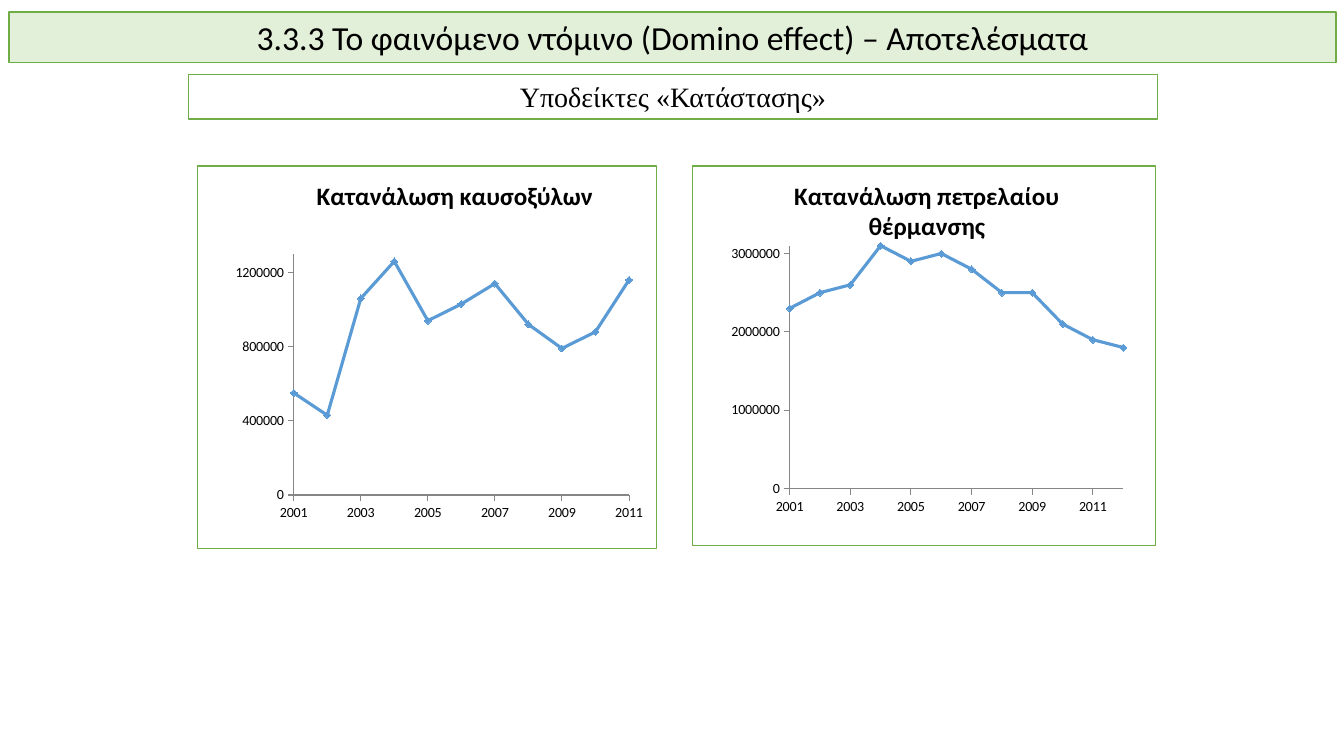
from lxml.etree import SubElement as Sub
from pptx import Presentation
from pptx.chart.data import XyChartData
from pptx.dml.color import RGBColor
from pptx.enum.chart import XL_CHART_TYPE as Kind, XL_MARKER_STYLE as Mark, XL_TICK_MARK as Tick
from pptx.enum.shapes import MSO_SHAPE as Shape
from pptx.enum.text import MSO_ANCHOR as Anchor, MSO_AUTO_SIZE as Auto, PP_ALIGN as Align
from pptx.oxml import parse_xml
from pptx.oxml.ns import nsdecls, qn
from pptx.util import Inches, Pt

HUES = {"ink": "000000", "paper": "FFFFFF", "mint": "E2F0D9", "green": "70AD47",
        "blue": "5B9BD5", "red": "FF0000", "gray": "868686"}
START = 2001

WOOD = {"title": "Κατανάλωση καυσοξύλων", "spot": (0.25, 0.02),
        "plot": (0.21, 0.23, 0.73, 0.63), "top": 1300000, "step": 400000, "hot": 3,
        "vals": [550000, 430000, 1060000, 1260000, 940000, 1030000,
                 1140000, 920000, 790000, 880000, 1160000]}
OIL = {"title": "Κατανάλωση πετρελαίου θέρμανσης", "spot": (0.21, 0.02),
       "plot": (0.21, 0.21, 0.72, 0.64), "top": 3100000, "step": 1000000, "hot": 4,
       "vals": [2300000, 2500000, 2600000, 3100000, 2900000, 3000000,
                2800000, 2500000, 2500000, 2100000, 1900000, 1800000]}


def hue(name):
    return RGBColor.from_string(HUES[name])


def paint(fill, name):
    fill.solid()
    fill.fore_color.rgb = hue(name)


def stroke(line, name, width):
    line.color.rgb = hue(name)
    line.width = Pt(width)


def style(font, face, size):
    font.name = face
    font.size = Pt(size)
    font.color.rgb = hue("ink")


def banner(shape, box, text, fill, face, size):
    shape.left, shape.top, shape.width, shape.height = map(Inches, box)
    paint(shape.fill, fill)
    stroke(shape.line, "green", 1)
    frame = shape.text_frame
    frame.word_wrap = True
    frame.auto_size = Auto.NONE
    frame.vertical_anchor = Anchor.MIDDLE
    para = frame.paragraphs[0]
    para.alignment = Align.CENTER
    run = para.add_run()
    run.text = text
    style(run.font, face, size)


def place(node, index, inner, **spot):
    for old in node.findall(qn("c:layout")):
        node.remove(old)
    layout = parse_xml(f"<c:layout {nsdecls('c')}/>")
    node.insert(index, layout)
    manual = Sub(layout, qn("c:manualLayout"))
    if inner:
        Sub(manual, qn("c:layoutTarget")).set("val", "inner")
    for key in "xy":
        Sub(manual, qn(f"c:{key}Mode")).set("val", "edge")
    for key, val in spot.items():
        Sub(manual, qn(f"c:{key}")).set("val", str(val))


def frame_chart(chart):
    chart.element.find(qn("c:chart")).addnext(parse_xml(
        f"<c:spPr {nsdecls('c', 'a')}>"
        f'<a:solidFill><a:srgbClr val="{HUES["paper"]}"/></a:solidFill>'
        f'<a:ln w="{Pt(1)}"><a:solidFill><a:srgbClr val="{HUES["green"]}"/></a:solidFill></a:ln>'
        "</c:spPr>"))


def scale(axis, low, high, step):
    axis.minimum_scale, axis.maximum_scale, axis.major_unit = low, high, step
    axis.has_major_gridlines = False
    axis.major_tick_mark = Tick.OUTSIDE
    axis.minor_tick_mark = Tick.NONE
    axis.tick_labels.number_format = "General"
    axis.tick_labels.number_format_is_linked = False
    stroke(axis.format.line, "gray", 0.75)


def dot(marker, shape, name):
    marker.style = shape
    marker.size = 5
    paint(marker.format.fill, name)
    stroke(marker.format.line, name, 0.75)


def trend(slide, box, info):
    data = XyChartData()
    row = data.add_series("Series 1")
    vals = info["vals"]
    for year, val in enumerate(vals, START):
        row.add_data_point(year, val)
    chart = slide.shapes.add_chart(Kind.XY_SCATTER_LINES, *map(Inches, box), data).chart
    style(chart.font, "Calibri", 10)
    frame_chart(chart)
    chart.has_legend = False
    chart.has_title = True
    run = chart.chart_title.text_frame.paragraphs[0].add_run()
    run.text = info["title"]
    style(run.font, "Calibri", 18)
    run.font.bold = True
    left, top = info["spot"]
    place(chart.chart_title.element, 1, False, x=left, y=top)
    left, top, width, height = info["plot"]
    area = chart.element.find(qn("c:chart")).find(qn("c:plotArea"))
    place(area, 0, True, x=left, y=top, w=width, h=height)
    scale(chart.category_axis, START, START + len(vals) - 1, 2)
    scale(chart.value_axis, 0, info["top"], info["step"])
    plot = chart.plots[0]
    plot.vary_by_categories = False
    line = plot.series[0]
    line.smooth = False
    stroke(line.format.line, "blue", 2.25)
    dot(line.marker, Mark.AUTOMATIC, "blue")
    for i in range(len(vals) - info["hot"], len(vals)):
        point = line.points[i]
        dot(point.marker, Mark.DIAMOND, "red")
        stroke(point.format.line, "blue", 2.25)


def main():
    deck = Presentation()
    deck.slide_width, deck.slide_height = Inches(13.33), Inches(7.5)
    slide = deck.slides.add_slide(deck.slide_layouts[5])
    banner(slide.shapes.title, (0.09, 0.12, 13.16, 0.5),
           "3.3.3 Το φαινόμενο ντόμινο (Domino effect) – Αποτελέσματα", "mint", "Calibri", 24)
    box = (1.87, 0.74, 9.61, 0.44)
    label = slide.shapes.add_shape(Shape.RECTANGLE, *map(Inches, box))
    label.shadow.inherit = False
    banner(label, box, "Υποδείκτες «Κατάστασης»", "paper", "Times New Roman", 20)
    trend(slide, (1.95, 1.64, 4.57, 3.81), WOOD)
    trend(slide, (6.86, 1.64, 4.61, 3.78), OIL)
    deck.save("out.pptx")


if __name__ == "__main__":
    main()
